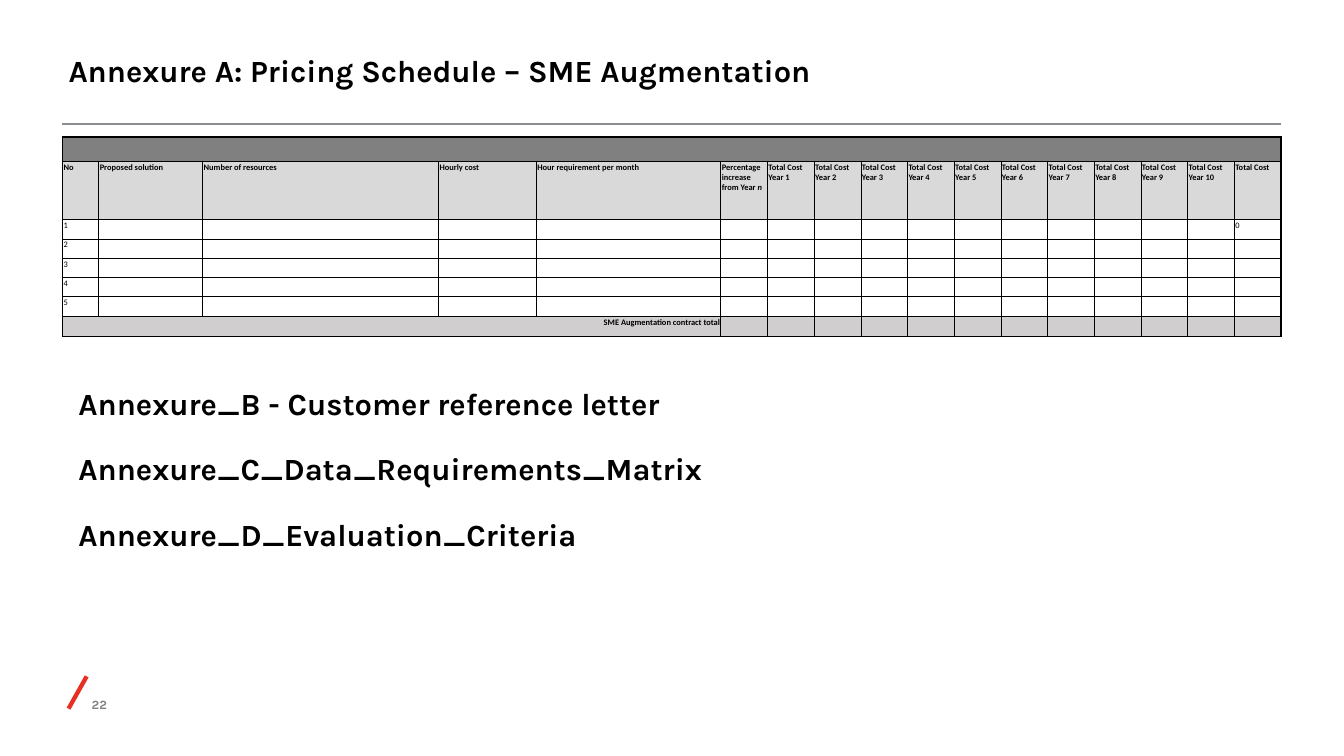
from lxml import etree
from pptx import Presentation
from pptx.dml.color import RGBColor
from pptx.enum import shapes, text
from pptx.oxml.ns import qn
from pptx.util import Inches, Pt

# Content
TITLE = "Annexure A: Pricing Schedule – SME Augmentation"
ANNEXURES = [
    (3.77, "Annexure_B - Customer reference letter"),
    (4.41, "Annexure_C_Data_Requirements_Matrix"),
    (5.07, "Annexure_D_Evaluation_Criteria"),
]
PAGE_NUMBER = "22"
HEADINGS = [
    "No", "Proposed solution", "Number of resources", "Hourly cost",
    "Hour requirement per month", "Percentage increase from Year ",
    *[f"Total Cost Year {year}" for year in range(1, 11)], "Total Cost",
]
HEADING_ITALICS = {5: "n"}
LINE_ITEMS = [[str(number)] + [""] * 16 for number in range(1, 6)]
LINE_ITEMS[0][-1] = "0"
TOTAL_LABEL = "SME Augmentation contract total"

THEME = {
    "heading_font": "Karla", "table_font": "Calibri",
    "heading_size": 22, "table_size": 6, "page_size": 9,
    "ink": "000000", "page": "808080", "rule": "8B8E91", "slash": "E73023",
    "banner": "808080", "header": "D9D9D9", "total": "D0CECE",
}

# Layout, in inches
LEFT, TEXT_LEFT, WIDTH = 0.62, 0.68, 12.09
TABLE_TOP = 1.36
DETAIL_WIDTHS = [0.36, 1.03, 2.34, 0.97, 1.83]
COST_COUNT = len(HEADINGS) - len(DETAIL_WIDTHS)
COST_WIDTH = (WIDTH - sum(DETAIL_WIDTHS)) / COST_COUNT
COLUMN_WIDTHS = DETAIL_WIDTHS + [COST_WIDTH] * COST_COUNT
ROW_HEIGHTS = [0.24, 0.58] + [0.19] * 4 + [0.2] * 2
HEAVY_COLUMN_EDGES = {0, 5, 17}
HEAVY_ROW_EDGES = {0, 1, 2, 7, 8}


def style(paragraph, font, size, color, bold, align=text.PP_ALIGN.LEFT):
    paragraph.alignment = align
    paragraph.font.name = THEME[font]
    paragraph.font.size = Pt(THEME[size])
    paragraph.font.bold = bold
    paragraph.font.color.rgb = RGBColor.from_string(THEME[color])


def add_text(slide, box, words, anchor, margins=None, size="heading_size",
             font="heading_font", color="ink", align=text.PP_ALIGN.LEFT):
    frame = slide.shapes.add_textbox(*map(Inches, box)).text_frame
    frame.word_wrap = True
    frame.vertical_anchor = anchor
    if margins:
        (frame.margin_left, frame.margin_top,
         frame.margin_right, frame.margin_bottom) = map(Inches, margins)
    frame.text = words
    style(frame.paragraphs[0], font, size, color, True, align)


def add_line(slide, start, end, color, weight):
    line = slide.shapes.add_connector(
        shapes.MSO_CONNECTOR.STRAIGHT, *map(Inches, start + end))
    line.line.color.rgb = RGBColor.from_string(THEME[color])
    line.line.width = Pt(weight)
    etree.SubElement(line._element.spPr, qn("a:effectLst"))


def add_borders(cell, row, column):
    right = column + (cell.span_width if cell.is_merge_origin else 1)
    heavy = {
        "L": column in HEAVY_COLUMN_EDGES, "R": right in HEAVY_COLUMN_EDGES,
        "T": row in HEAVY_ROW_EDGES, "B": row + 1 in HEAVY_ROW_EDGES,
    }
    properties = cell._tc.get_or_add_tcPr()
    for side, is_heavy in heavy.items():
        border = etree.SubElement(properties, qn(f"a:ln{side}"),
                                  w=str(Pt(1 if is_heavy else 0.5)))
        fill = etree.SubElement(border, qn("a:solidFill"))
        etree.SubElement(fill, qn("a:srgbClr"), val=THEME["ink"])


def add_pricing_table(slide):
    rows = [[""] * 17, HEADINGS, *LINE_ITEMS, [TOTAL_LABEL] + [""] * 16]
    last = len(rows) - 1
    fills = {0: "banner", 1: "header", last: "total"}
    table = slide.shapes.add_table(
        len(rows), len(HEADINGS), Inches(LEFT), Inches(TABLE_TOP),
        Inches(WIDTH), Inches(sum(ROW_HEIGHTS))).table
    table.first_row = table.horz_banding = False
    for column, width in zip(table.columns, COLUMN_WIDTHS):
        column.width = Inches(width)
    for row, height in zip(table.rows, ROW_HEIGHTS):
        row.height = Inches(height)
    table.cell(0, 0).merge(table.cell(0, 16))
    table.cell(last, 0).merge(table.cell(last, 4))

    for r, row in enumerate(rows):
        for c, words in enumerate(row):
            cell = table.cell(r, c)
            cell.margin_left = cell.margin_right = cell.margin_top = Inches(0.01)
            cell.margin_bottom = 0
            add_borders(cell, r, c)
            if r in fills:
                cell.fill.solid()
                cell.fill.fore_color.rgb = RGBColor.from_string(THEME[fills[r]])
            else:
                cell.fill.background()
            paragraph = cell.text_frame.paragraphs[0]
            if words:
                paragraph.add_run().text = words
            if r == 1 and c in HEADING_ITALICS:
                variable = paragraph.add_run()
                variable.text = HEADING_ITALICS[c]
                variable.font.italic = True
            align = text.PP_ALIGN.RIGHT if words == TOTAL_LABEL else text.PP_ALIGN.LEFT
            style(paragraph, "table_font", "table_size", "ink", r in fills, align)
            # Small end mark keeps empty rows at their set height
            etree.SubElement(paragraph._p, qn("a:endParaRPr"),
                             sz=str(THEME["table_size"] * 100))


def main():
    deck = Presentation()
    deck.slide_width, deck.slide_height = Inches(13.33), Inches(7.5)
    slide = deck.slides.add_slide(deck.slide_layouts[6])

    # Page number and ruled lines
    add_text(slide, (0.49, 6.88, 0.57, 0.23), PAGE_NUMBER, text.MSO_ANCHOR.BOTTOM,
             (0, 0, 0, 0.05), "page_size", color="page", align=text.PP_ALIGN.RIGHT)
    add_line(slide, (LEFT, 1.23), (LEFT + WIDTH, 1.23), "rule", 1.65)
    add_line(slide, (TEXT_LEFT, 7.03), (0.86, 6.71), "slash", 3.05)

    # Title, pricing table and further annexures
    add_text(slide, (TEXT_LEFT, 0.3, 11.44, 0.79), TITLE,
             text.MSO_ANCHOR.MIDDLE, (0, 0, 0, 0))
    add_pricing_table(slide)
    for top, annexure in ANNEXURES:
        add_text(slide, (TEXT_LEFT, top, 6.67, 0.47), annexure, text.MSO_ANCHOR.TOP)

    deck.save("out.pptx")


if __name__ == "__main__":
    main()
